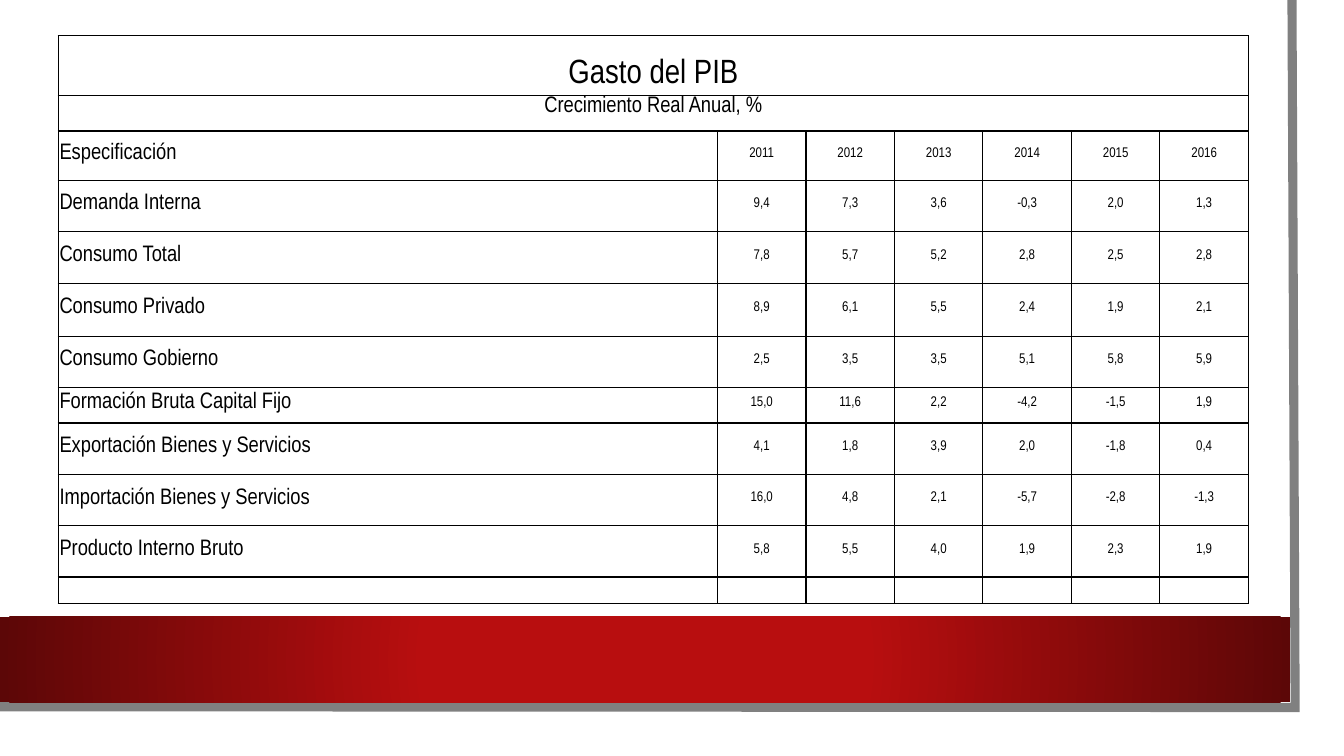
from dataclasses import dataclass

from lxml.etree import SubElement
from pptx import Presentation
from pptx.dml.color import RGBColor
from pptx.enum.shapes import MSO_SHAPE
from pptx.enum.text import MSO_ANCHOR as Anchor, PP_ALIGN as Align
from pptx.oxml import parse_xml
from pptx.oxml.ns import nsdecls, qn
from pptx.util import Cm, Pt


@dataclass(frozen=True)
class Theme:
    """Colours, font and type sizes of the slide."""
    font: str = "Arial Narrow"
    ink: str = "000000"
    edge: str = "808080"
    band_centre: str = "B80E0F"
    band_rim: str = "5C0707"
    title: int = 24
    label: int = 16
    figure: int = 10


THEME = Theme()
TITLE = "Gasto del PIB"
SUBTITLE = "Crecimiento Real Anual, %"
ROWS = [
    ("Especificación", "2011 2012 2013 2014 2015 2016"),
    ("Demanda Interna", "9,4 7,3 3,6 -0,3 2,0 1,3"),
    ("Consumo Total", "7,8 5,7 5,2 2,8 2,5 2,8"),
    ("Consumo Privado", "8,9 6,1 5,5 2,4 1,9 2,1"),
    ("Consumo Gobierno", "2,5 3,5 3,5 5,1 5,8 5,9"),
    ("Formación Bruta Capital Fijo", "15,0 11,6 2,2 -4,2 -1,5 1,9"),
    ("Exportación Bienes y Servicios", "4,1 1,8 3,9 2,0 -1,8 0,4"),
    ("Importación Bienes y Servicios", "16,0 4,8 2,1 -5,7 -2,8 -1,3"),
    ("Producto Interno Bruto", "5,8 5,5 4,0 1,9 2,3 1,9"),
]
WIDTHS = [16.61] + [2.23] * 6
HEIGHTS = [1.5, 0.9, 1.24, 1.3, 1.3, 1.33, 1.29, 0.9, 1.3, 1.29, 1.29, 0.66]


def add_page_edge(s):
    """Draw the grey edge along the right and bottom of the page."""
    builder = s.shapes.build_freeform(Cm(32.56), Cm(0))
    corners = [(Cm(32.64), Cm(17.83)), (Cm(-0.08), Cm(17.81))]
    builder.add_line_segments(corners, close=False)
    sp = builder.convert_to_shape()
    sp.shadow.inherit = False
    sp.fill.background()
    sp.line.color.rgb = RGBColor.from_string(THEME.edge)
    sp.line.width = Pt(6.5)
    SubElement(sp.line._ln, qn("a:miter"), lim="800000")


def add_band(s):
    """Draw the red band with its radial gradient."""
    sp = s.shapes.add_shape(MSO_SHAPE.RECTANGLE, Cm(0), Cm(15.54), Cm(32.51), Cm(2.16))
    sp.shadow.inherit = False
    sp.line.fill.background()
    sp.fill.background()
    props = sp.element.spPr
    gradient = parse_xml(
        f'<a:gradFill {nsdecls("a")} rotWithShape="1"><a:gsLst>'
        f'<a:gs pos="34000"><a:srgbClr val="{THEME.band_centre}"/></a:gs>'
        f'<a:gs pos="100000"><a:srgbClr val="{THEME.band_rim}"/></a:gs></a:gsLst>'
        '<a:path path="circle"><a:fillToRect l="50000" t="50000" r="50000" b="50000"/>'
        '</a:path></a:gradFill>')
    props.replace(props.find(qn("a:noFill")), gradient)


def add_borders(cell):
    """Rule all four sides of a cell."""
    props = cell._tc.get_or_add_tcPr()
    for i, side in enumerate(("lnL", "lnR", "lnT", "lnB")):
        props.insert(i, parse_xml(
            f'<a:{side} {nsdecls("a")} w="12700"><a:solidFill>'
            f'<a:srgbClr val="{THEME.ink}"/></a:solidFill></a:{side}>'))


def style_cell(cell):
    """Give a cell its margins, borders and clear fill."""
    cell.margin_left = cell.margin_right = cell.margin_top = Cm(0.03)
    cell.margin_bottom = Cm(0.13)
    cell.fill.background()
    add_borders(cell)


def write_cell(cell, text, size, align=Align.CENTER, anchor=Anchor.MIDDLE):
    """Write one run into a cell."""
    cell.vertical_anchor = anchor
    p = cell.text_frame.paragraphs[0]
    p.alignment = align
    r = p.add_run()
    r.text = text
    r.font.name = THEME.font
    r.font.size = Pt(size)
    r.font.color.rgb = RGBColor.from_string(THEME.ink)


def add_growth_table(s):
    """Add the table of yearly growth rates."""
    frame = s.shapes.add_table(len(HEIGHTS), len(WIDTHS), Cm(1.47), Cm(0.9),
                               Cm(sum(WIDTHS)), Cm(sum(HEIGHTS)))
    table = frame.table
    table.first_row = table.horz_banding = False
    for column, width in zip(table.columns, WIDTHS):
        column.width = Cm(width)
    for row, height in zip(table.rows, HEIGHTS):
        row.height = Cm(height)
    for cell in table.iter_cells():
        style_cell(cell)
    for i in range(2):
        table.cell(i, 0).merge(table.cell(i, len(WIDTHS) - 1))
    write_cell(table.cell(0, 0), TITLE, THEME.title, anchor=Anchor.BOTTOM)
    write_cell(table.cell(1, 0), SUBTITLE, THEME.label, anchor=Anchor.TOP)
    for i, (label, figures) in enumerate(ROWS, start=2):
        write_cell(table.cell(i, 0), label, THEME.label, Align.LEFT)
        for j, figure in enumerate(figures.split(), start=1):
            write_cell(table.cell(i, j), figure, THEME.figure)
    for cell in table.rows[len(HEIGHTS) - 1].cells:
        cell.text_frame.paragraphs[0].font.size = Pt(THEME.figure)
        SubElement(cell.text_frame.paragraphs[0]._p, qn("a:endParaRPr"),
                   sz=str(THEME.figure * 100))


def main():
    """Build the slide and save it."""
    prs = Presentation()
    prs.slide_width, prs.slide_height = Cm(33.87), Cm(19.05)
    s = prs.slides.add_slide(prs.slide_layouts[6])
    add_page_edge(s)
    add_band(s)
    add_growth_table(s)
    prs.save("out.pptx")


if __name__ == "__main__":
    main()
